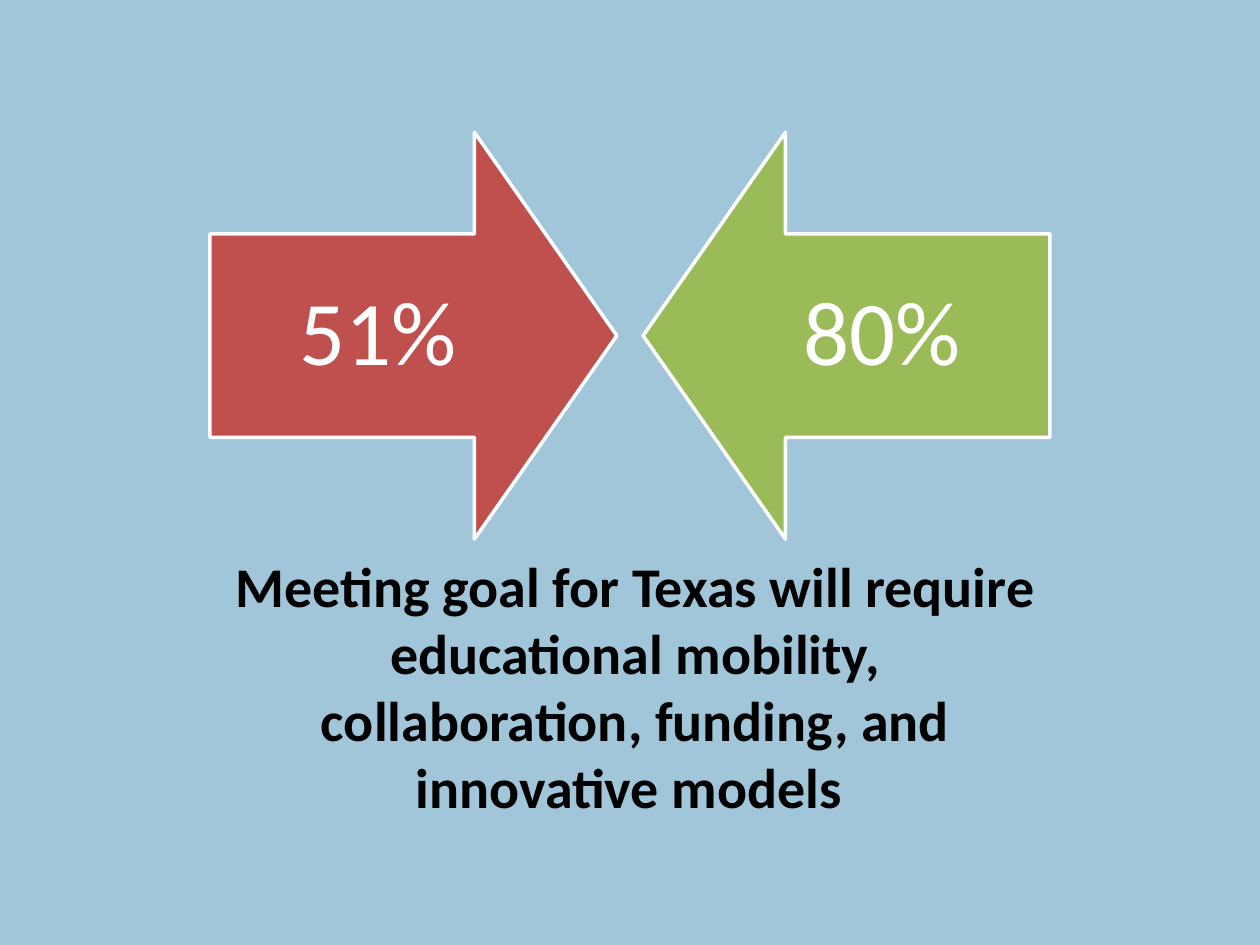
"""Build a slide with two facing arrows and a statement below them."""
import pptx
import pptx.dml.color
import pptx.enum.shapes
import pptx.enum.text
import pptx.util

Pt = pptx.util.Pt
Kind = pptx.enum.shapes.MSO_SHAPE
HUES = {"back": "A1C6D9", "red": "C0504D", "green": "9BBB59",
        "white": "FFFFFF", "black": "000000"}


def tint(name):
    """Return the named colour."""
    return pptx.dml.color.RGBColor.from_string(HUES[name])


class Deck:
    """Hold the style and the current slide."""

    def __init__(self, wide, high, font):
        """Start a file with one blank slide."""
        self.show = pptx.Presentation()
        self.show.slide_width, self.show.slide_height = Pt(wide), Pt(high)
        self.font = font
        self.slide = self.show.slides.add_slide(self.show.slide_layouts[6])
        fill = self.slide.background.fill
        fill.solid()
        fill.fore_color.rgb = tint("back")

    def text(self, shape, words, size, hue, bold=False):
        """Put one centred run into a shape."""
        frame = shape.text_frame
        frame.word_wrap = True
        frame.vertical_anchor = pptx.enum.text.MSO_ANCHOR.MIDDLE
        para = frame.paragraphs[0]
        para.alignment = pptx.enum.text.PP_ALIGN.CENTER
        run = para.add_run()
        run.text = words
        run.font.name, run.font.size, run.font.bold = self.font, Pt(size), bold
        run.font.color.rgb = tint(hue)
        return frame

    def arrow(self, kind, left, top, side, hue, words):
        """Draw a square block arrow with a label."""
        shape = self.slide.shapes.add_shape(
            kind, Pt(left), Pt(top), Pt(side), Pt(side))
        shape.adjustments[0], shape.adjustments[1] = 0.5, 0.35
        shape.shadow.inherit = False
        shape.fill.solid()
        shape.fill.fore_color.rgb = tint(hue)
        shape.line.color.rgb = tint("white")
        shape.line.width = Pt(2)
        frame = self.text(shape, words, 52, "white")
        frame.margin_left = frame.margin_right = Pt(28.8)
        frame.margin_top = frame.margin_bottom = Pt(28.8)
        frame.paragraphs[0].line_spacing = 0.9

    def label(self, left, top, wide, high, words):
        """Add a bold statement."""
        box = self.slide.shapes.add_textbox(
            Pt(left), Pt(top), Pt(wide), Pt(high))
        self.text(box, words, 32, "black", bold=True)


def main():
    """Build and save the slide."""
    deck = Deck(720, 540, "Calibri")
    edge, top, side = 120, 75.6, 232.5
    deck.arrow(Kind.RIGHT_ARROW, edge, top, side, "red", "51%")
    deck.arrow(Kind.LEFT_ARROW, 720 - edge - side, top, side, "green", "80%")
    deck.label(126, 310.5, 474, 162.5,
               "Meeting goal for Texas will require educational mobility, "
               "collaboration, funding, and innovative models ")
    deck.show.save("out.pptx")


if __name__ == "__main__":
    main()
